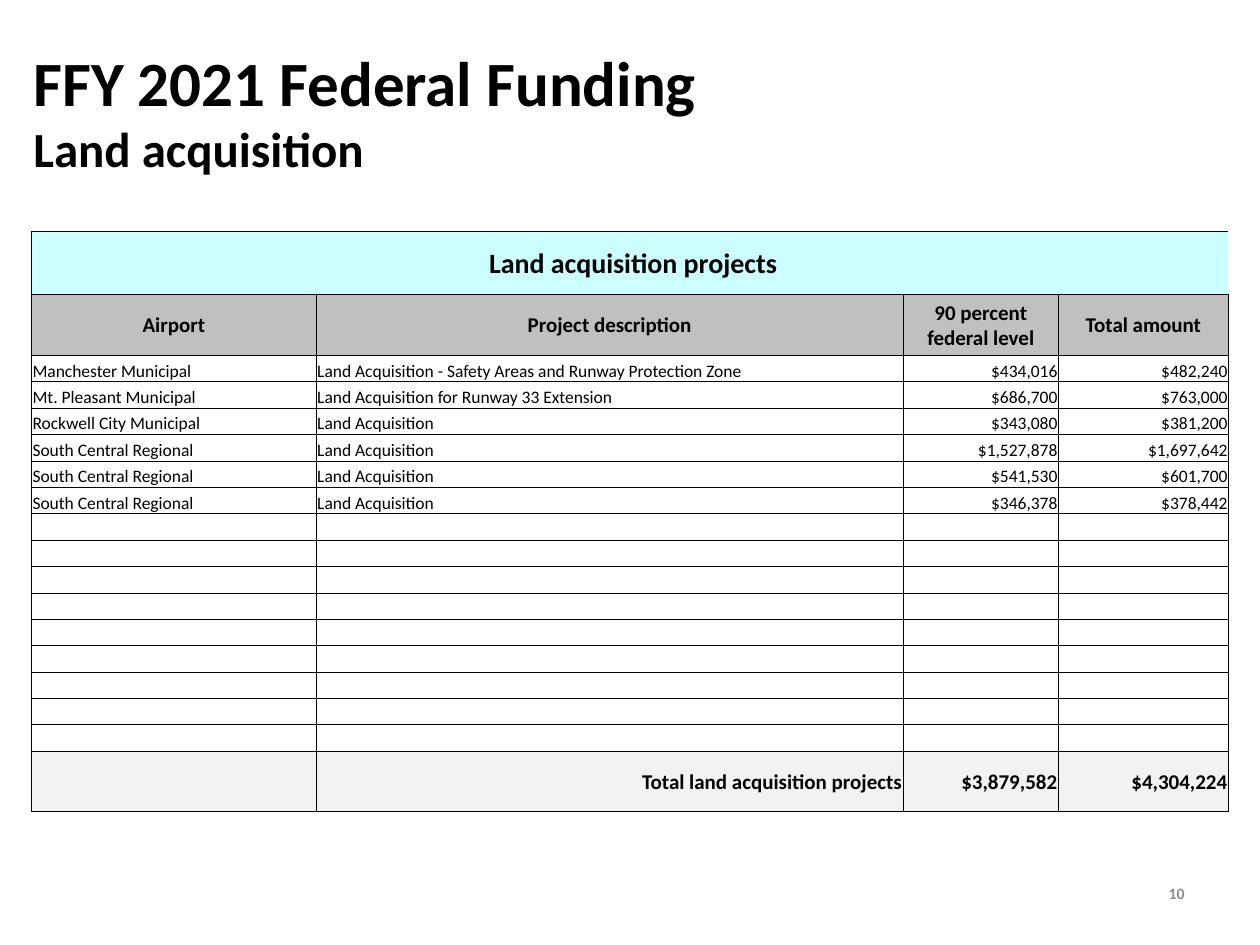
"""Build the land acquisition funding slide."""
from lxml.etree import SubElement
from pptx import Presentation
from pptx.dml.color import RGBColor
from pptx.enum.text import MSO_ANCHOR as ANCHOR, PP_ALIGN as ALIGN
from pptx.oxml.ns import qn
from pptx.util import Pt

BLACK = RGBColor(0x00, 0x00, 0x00)
GRAY = RGBColor(0x8C, 0x8C, 0x8C)
CYAN = RGBColor(0xCC, 0xFF, 0xFF)
SILVER = RGBColor(0xC0, 0xC0, 0xC0)
PALE = RGBColor(0xF2, 0xF2, 0xF2)

PROJECTS = [
    ("Manchester Municipal", "Land Acquisition - Safety Areas and Runway Protection Zone", "$434,016", "$482,240"),
    ("Mt. Pleasant Municipal", "Land Acquisition for Runway 33 Extension", "$686,700", "$763,000"),
    ("Rockwell City Municipal", "Land Acquisition", "$343,080", "$381,200"),
    ("South Central Regional", "Land Acquisition", "$1,527,878", "$1,697,642"),
    ("South Central Regional", "Land Acquisition", "$541,530", "$601,700"),
    ("South Central Regional", "Land Acquisition", "$346,378", "$378,442"),
]
ROWS = [
    (" Land acquisition projects", "", "", ""),
    ("Airport", "Project description", "90 percent federal level", "Total amount"),
    *PROJECTS,
    *[("",) * 4] * 9,
    ("", "Total land acquisition projects", "$3,879,582", "$4,304,224"),
]
LAST = len(ROWS) - 1
COL_WIDTHS = (162.7, 335.5, 88.6, 97.2)
SPECIAL_ROWS = {0: (36.5, 16, CYAN), 1: (34.6, 12, SILVER), LAST: (34.6, 12, PALE)}
BODY_ROW = (15.1, 10, None)


def style(p, size, color, bold, align):
    p.alignment = align
    p.font.name, p.font.size, p.font.bold = "Calibri", Pt(size), bold
    p.font.color.rgb = color


def add_border(cell, side):
    ln = SubElement(cell._tc.get_or_add_tcPr(), qn(f"a:ln{side}"), w=str(Pt(0.5)))
    SubElement(SubElement(ln, qn("a:solidFill")), qn("a:srgbClr"), val=str(BLACK))


prs = Presentation()
prs.slide_width, prs.slide_height = Pt(720), Pt(540)
s = prs.slides.add_slide(prs.slide_layouts[6])

number = s.shapes.add_textbox(Pt(516), Pt(491.75), Pt(168), Pt(37.5))
tf = number.text_frame
tf.word_wrap, tf.vertical_anchor = True, ANCHOR.MIDDLE
tf.text = "10"
style(tf.paragraphs[0], 9, GRAY, True, ALIGN.RIGHT)

title = s.shapes.add_textbox(Pt(12), Pt(18), Pt(678), Pt(90))
tf = title.text_frame
tf.word_wrap, tf.vertical_anchor = True, ANCHOR.MIDDLE
p = tf.paragraphs[0]
style(p, 36, BLACK, True, ALIGN.LEFT)
p.add_run().text = "FFY 2021 Federal Funding"
p.add_line_break()
r = p.add_run()
r.text, r.font.size = "Land acquisition", Pt(28)

frame = s.shapes.add_table(len(ROWS), 4, Pt(18), Pt(132), Pt(684), Pt(332.2))
table = frame.table
table.first_row = table.horz_banding = False
for col, width in zip(table.columns, COL_WIDTHS):
    col.width = Pt(width)

for i, texts in enumerate(ROWS):
    height, size, fill = SPECIAL_ROWS.get(i, BODY_ROW)
    table.rows[i].height = Pt(height)
    for j, text in enumerate(texts):
        cell = table.cell(i, j)
        cell.margin_left = cell.margin_right = cell.margin_top = Pt(0.6)
        cell.margin_bottom = 0
        cell.vertical_anchor = ANCHOR.MIDDLE if fill else ANCHOR.BOTTOM
        for side in "LTB" if i == 0 else "LRTB":
            add_border(cell, side)
        if fill:
            cell.fill.solid()
            cell.fill.fore_color.rgb = fill
        else:
            cell.fill.background()
        p = cell.text_frame.paragraphs[0]
        if text:
            p.text = text
        else:
            SubElement(p._p, qn("a:endParaRPr"), sz=str(size * 100))
        if i < 2:
            align = ALIGN.CENTER
        else:
            align = ALIGN.RIGHT if j > 1 or (i == LAST and j == 1) else ALIGN.LEFT
        style(p, size, BLACK, fill is not None, align)
table.cell(0, 0).merge(table.cell(0, 3))

prs.save("out.pptx")
